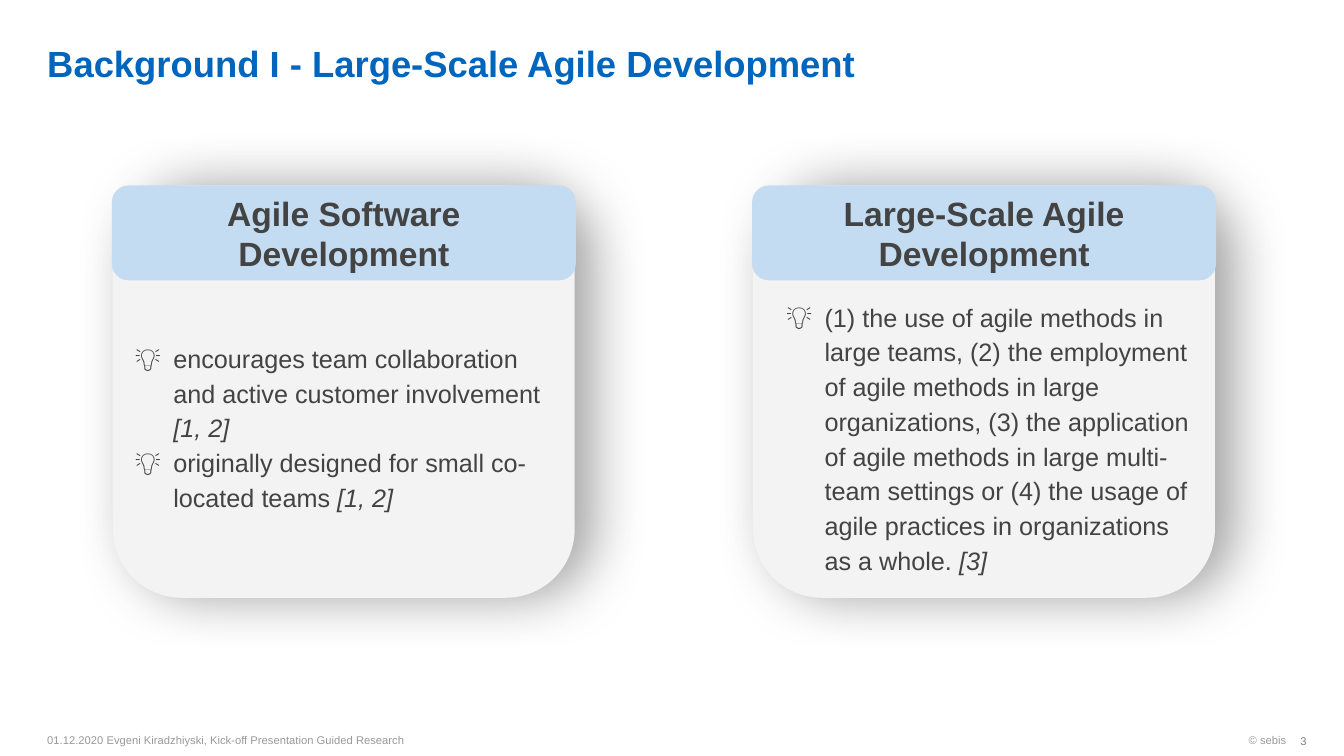
"""Builds a slide comparing agile and large-scale agile development."""
from lxml import etree
from pptx import Presentation
from pptx.dml.color import RGBColor
from pptx.enum.shapes import MSO_SHAPE
from pptx.enum.text import MSO_ANCHOR, PP_ALIGN
from pptx.oxml.ns import qn
from pptx.util import Inches, Pt

ROUNDED = MSO_SHAPE.ROUNDED_RECTANGLE
MIDDLE, BOTTOM, TOP = MSO_ANCHOR.MIDDLE, MSO_ANCHOR.BOTTOM, MSO_ANCHOR.TOP
CENTER, RIGHT = PP_ALIGN.CENTER, PP_ALIGN.RIGHT
BLUE = RGBColor(0x00, 0x65, 0xBD)
LIGHT_BLUE = RGBColor(0xC4, 0xDC, 0xF2)
PANEL_GREY = RGBColor(0xF3, 0xF3, 0xF3)
DARK_GREY = RGBColor(0x43, 0x43, 0x43)
FOOTER_GREY = RGBColor(0x99, 0x99, 0x99)
NUMBER_GREY = RGBColor(0x7F, 0x7F, 0x7F)

CARDS = [
    (1.12, "Agile Software Development", (1.12, 3.26, 4.48, 2.08), [
        ("encourages team collaboration and active customer involvement ", "[1, 2]"),
        ("originally designed for small co-located teams ", "[1, 2]"),
    ]),
    (7.47, "Large-Scale Agile Development", (7.58, 2.85, 4.37, 3.09), [
        ("(1) the use of agile methods in large teams, (2) the employment of agile "
         "methods in large organizations, (3) the application of agile methods in "
         "large multi-team settings or (4) the usage of agile practices in "
         "organizations as a whole. ", "[3]"),
    ]),
]


def add_text_box(place, anchor, insets):
    frame = page.shapes.add_textbox(*map(Inches, place)).text_frame
    frame.word_wrap = True
    frame.vertical_anchor = anchor
    (frame.margin_left, frame.margin_top,
     frame.margin_right, frame.margin_bottom) = map(Inches, insets)
    return frame


def set_font(para, size, color, bold=False):
    font = para.font
    font.name, font.size, font.bold = "Arial", Pt(size), bold
    font.color.rgb = color


deck = Presentation()
deck.slide_width, deck.slide_height = Inches(13.33), Inches(7.5)
page = deck.slides.add_slide(deck.slide_layouts[6])

title = add_text_box((0.37, 0.05, 11.58, 0.79), BOTTOM, (0.1, 0, 0.1, 0))
title.text = "Background I - Large-Scale Agile Development"
set_font(title.paragraphs[0], 26, BLUE, True)

for left, heading, body_place, points in CARDS:
    panel = page.shapes.add_shape(ROUNDED, Inches(left), Inches(1.84), Inches(4.58), Inches(4.09))
    panel.fill.solid()
    panel.fill.fore_color.rgb = PANEL_GREY
    panel.line.fill.background()
    panel.shadow.inherit = False
    effects = panel.element.spPr.find(qn("a:effectLst"))
    shadow = etree.SubElement(effects, qn("a:outerShdw"), blurRad=str(Pt(39.4)),
                              dist=str(Pt(13.5)), dir="0", algn="bl", rotWithShape="0")
    shade = etree.SubElement(shadow, qn("a:srgbClr"), val=str(DARK_GREY))
    etree.SubElement(shade, qn("a:alpha"), val="50000")

    header = page.shapes.add_shape(ROUNDED, Inches(left), Inches(1.85), Inches(4.58), Inches(0.92))
    header.fill.solid()
    header.fill.fore_color.rgb = LIGHT_BLUE
    header.line.color.rgb = LIGHT_BLUE
    header.line.width = Pt(1.5)
    header.shadow.inherit = False
    label = header.text_frame
    label.text = heading
    label.vertical_anchor = MIDDLE
    label.margin_left = label.margin_right = Inches(0.1)
    label.margin_top = label.margin_bottom = Inches(0.1)
    label.paragraphs[0].alignment = CENTER
    set_font(label.paragraphs[0], 24, DARK_GREY, True)

    body = add_text_box(body_place, TOP, (0.1, 0.1, 0.1, 0.1))
    for index, (statement, citation) in enumerate(points):
        para = body.add_paragraph() if index else body.paragraphs[0]
        para.line_spacing = 1.15
        props = para._p.get_or_add_pPr()
        props.set("marL", str(Inches(0.5)))
        props.set("indent", str(Inches(-0.38)))
        bullet_color = etree.SubElement(props, qn("a:buClr"))
        etree.SubElement(bullet_color, qn("a:srgbClr"), val=str(DARK_GREY))
        etree.SubElement(props, qn("a:buFont"), typeface="Arial")
        etree.SubElement(props, qn("a:buChar"), char="💡")
        set_font(para, 18, DARK_GREY)
        para.add_run().text = statement
        span = para.add_run()
        span.text = citation
        span.font.italic = True

footer = add_text_box((0.37, 7.24, 12.6, 0.2), MIDDLE, (0.1, 0, 0.1, 0))
footer.text = "01.12.2020 Evgeni Kiradzhiyski, Kick-off Presentation Guided Research\t© sebis"
footer_line = footer.paragraphs[0]
tabs = etree.SubElement(footer_line._p.get_or_add_pPr(), qn("a:tabLst"))
etree.SubElement(tabs, qn("a:tab"), pos=str(Inches(12.29)), algn="r")
set_font(footer_line, 8, FOOTER_GREY)

number = add_text_box((12.6, 7.19, 0.36, 0.32), MIDDLE, (0.1, 0.05, 0, 0.05))
number.text = "3"
number.paragraphs[0].alignment = RIGHT
set_font(number.paragraphs[0], 8, NUMBER_GREY)

deck.save("out.pptx")
